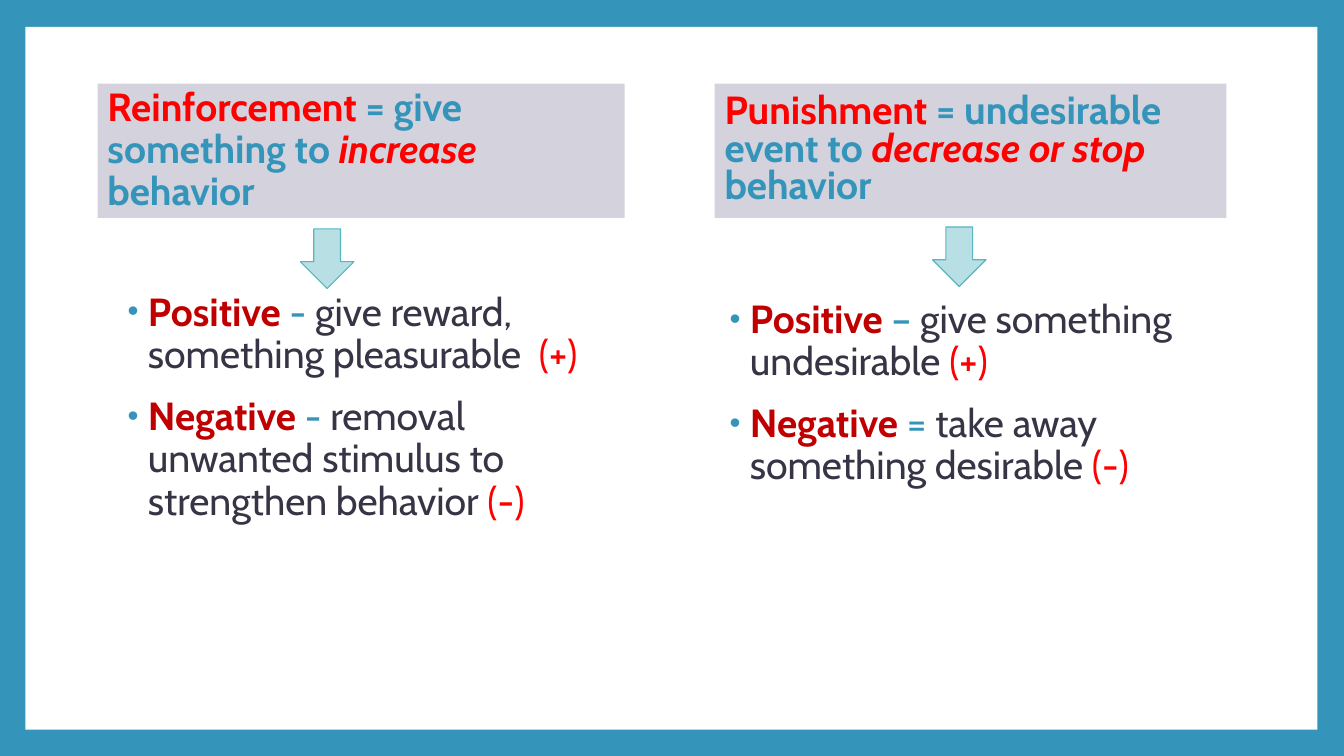
from lxml import etree
from pptx import Presentation
from pptx.dml.color import RGBColor
from pptx.enum.shapes import MSO_SHAPE as Shape
from pptx.enum.text import MSO_ANCHOR as Anchor, PP_ALIGN as Align
from pptx.oxml.ns import qn
from pptx.util import Cm, Pt

BLUE, RED, DARK_RED, INK = "3494BA", "FF0000", "C00000", "373545"
TERM = dict(color=RED, bold=True)
MEANING = dict(color=BLUE, bold=True)
EFFECT = dict(color=RED, bold=True, italic=True)
KIND, DASH, DETAIL, SIGN = (dict(color=c, bold=c == DARK_RED)
                            for c in (DARK_RED, BLUE, INK, RED))

COLUMNS = [
    dict(
        heading=[("Reinforcement", TERM), (" = give something to ", MEANING),
                 ("increase ", EFFECT), ("behavior", MEANING)],
        heading_left=2.46, heading_width=13.28, heading_spacing=0.9,
        arrow=(7.57, 5.77),
        bullets_at=(2.84, 7.24),
        bullets=[
            [("Positive ", KIND), ("- ", DASH),
             ("give reward, something pleasurable  ", DETAIL), ("(+)", SIGN)],
            [("Negative ", KIND), ("- ", DASH),
             ("removal unwanted stimulus to strengthen behavior ", DETAIL), ("(-)", SIGN)],
        ],
    ),
    dict(
        heading=[("Punishment ", TERM), ("= undesirable event to ", MEANING),
                 ("decrease or stop", EFFECT), (" behavior", MEANING)],
        heading_left=18.01, heading_width=12.9, heading_spacing=0.8,
        arrow=(23.5, 5.72),
        bullets_at=(18.01, 7.42),
        bullets=[
            [("Positive", KIND), (" – ", DASH),
             ("give something undesirable ", DETAIL), ("(+)", SIGN)],
            [("Negative ", KIND), ("= ", DASH),
             ("take away something desirable ", DETAIL), ("(-)", SIGN)],
        ],
    ),
]
HEADING_TOP, HEADING_HEIGHT = 2.11, 3.38
ARROW_WIDTH, ARROW_HEIGHT = 1.35, 1.5
BULLETS_WIDTH, BULLETS_HEIGHT = 12.9, 9.32


def paint(color_format, color):
    color_format.solid()
    color_format.fore_color.rgb = RGBColor.from_string(color)


def add_block(kind, left, top, width, height, fill, line=None):
    block = slide.shapes.add_shape(kind, Cm(left), Cm(top), Cm(width), Cm(height))
    block.shadow.inherit = False
    paint(block.fill, fill)
    if line:
        paint(block.line.fill, line)
        block.line.width = Pt(0.79)
    else:
        block.line.fill.background()
    return block


def add_run(paragraph, text, color, bold=False, italic=False, size=28, font="Cabin"):
    run = paragraph.add_run()
    run.text = text
    run.font.name, run.font.size = font, Pt(size)
    run.font.bold, run.font.italic = bold, italic
    paint(run.font.fill, color)


def write_paragraph(paragraph, parts, spacing):
    paragraph.alignment = Align.LEFT
    paragraph.line_spacing = spacing
    for text, style in parts:
        add_run(paragraph, text, **style)


def add_bullet(paragraph):
    """Give the paragraph a small blue bullet with a hanging indent."""
    properties = paragraph._p.get_or_add_pPr()
    properties.set("marL", str(Cm(0.64)))
    properties.set("indent", str(-Cm(0.51)))
    color = etree.SubElement(properties, qn("a:buClr"))
    etree.SubElement(color, qn("a:srgbClr"), val=BLUE)
    etree.SubElement(properties, qn("a:buSzPct"), val="80000")
    etree.SubElement(properties, qn("a:buFont"), typeface="Arial")
    etree.SubElement(properties, qn("a:buChar"), char="•")


presentation = Presentation()
presentation.slide_width, presentation.slide_height = Cm(33.87), Cm(19.05)
slide = presentation.slides.add_slide(presentation.slide_layouts[6])
paint(slide.background.fill, BLUE)
add_block(Shape.RECTANGLE, 0.64, 0.68, 32.56, 17.71, "FFFFFF")

for column in COLUMNS:
    heading = add_block(Shape.RECTANGLE, column["heading_left"], HEADING_TOP,
                        column["heading_width"], HEADING_HEIGHT, "D4D3DD").text_frame
    heading.word_wrap = True
    heading.vertical_anchor = Anchor.MIDDLE
    write_paragraph(heading.paragraphs[0], column["heading"], column["heading_spacing"])

    left, top = column["bullets_at"]
    bullets = slide.shapes.add_textbox(
        Cm(left), Cm(top), Cm(BULLETS_WIDTH), Cm(BULLETS_HEIGHT)).text_frame
    bullets.word_wrap = True
    for index, parts in enumerate(column["bullets"]):
        paragraph = bullets.add_paragraph() if index else bullets.paragraphs[0]
        write_paragraph(paragraph, parts, 0.9)
        paragraph.space_before = Pt(14)
        add_bullet(paragraph)

    add_block(Shape.DOWN_ARROW, *column["arrow"], ARROW_WIDTH, ARROW_HEIGHT,
              "B7DFE4", line="58B6C0")

presentation.save("out.pptx")
